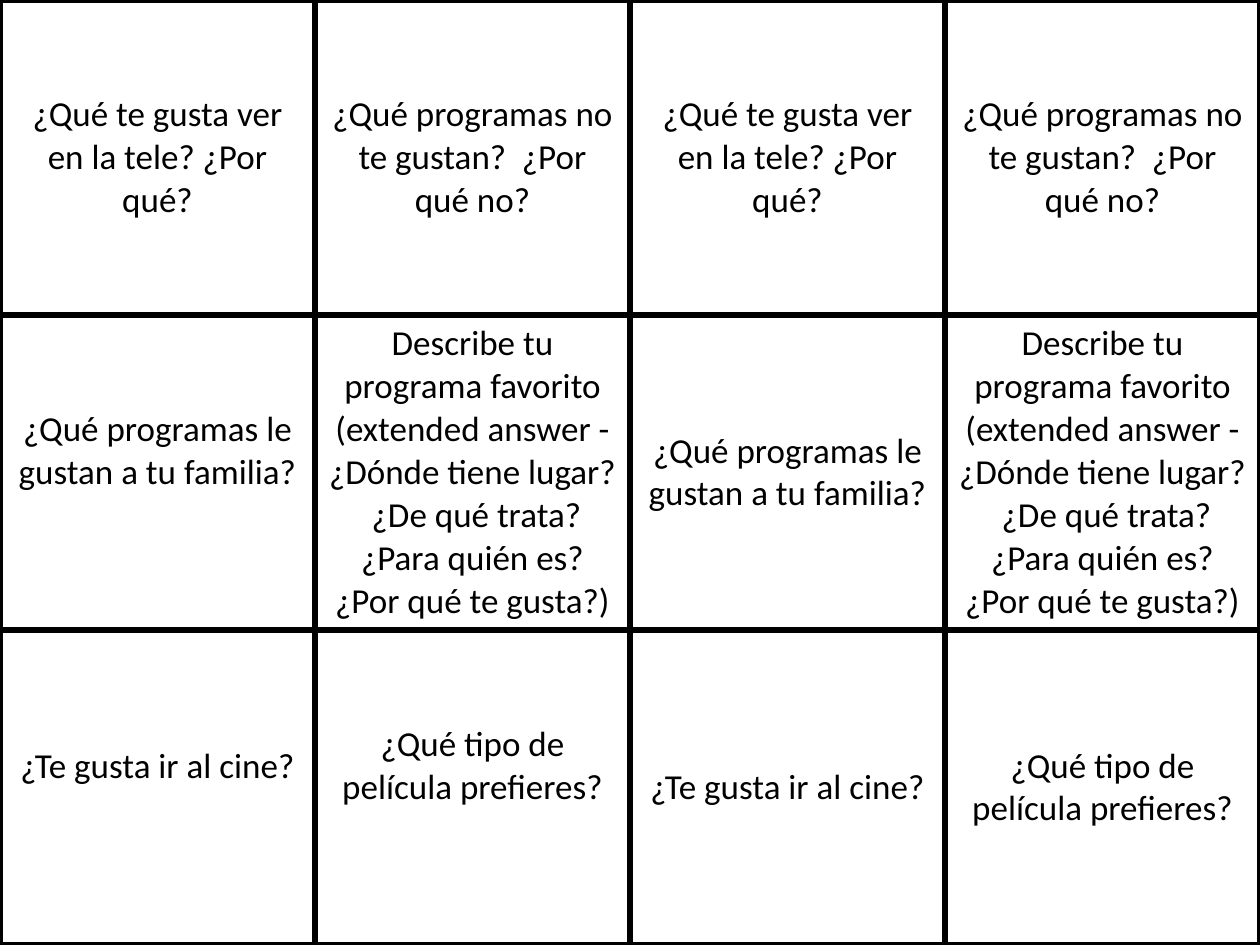
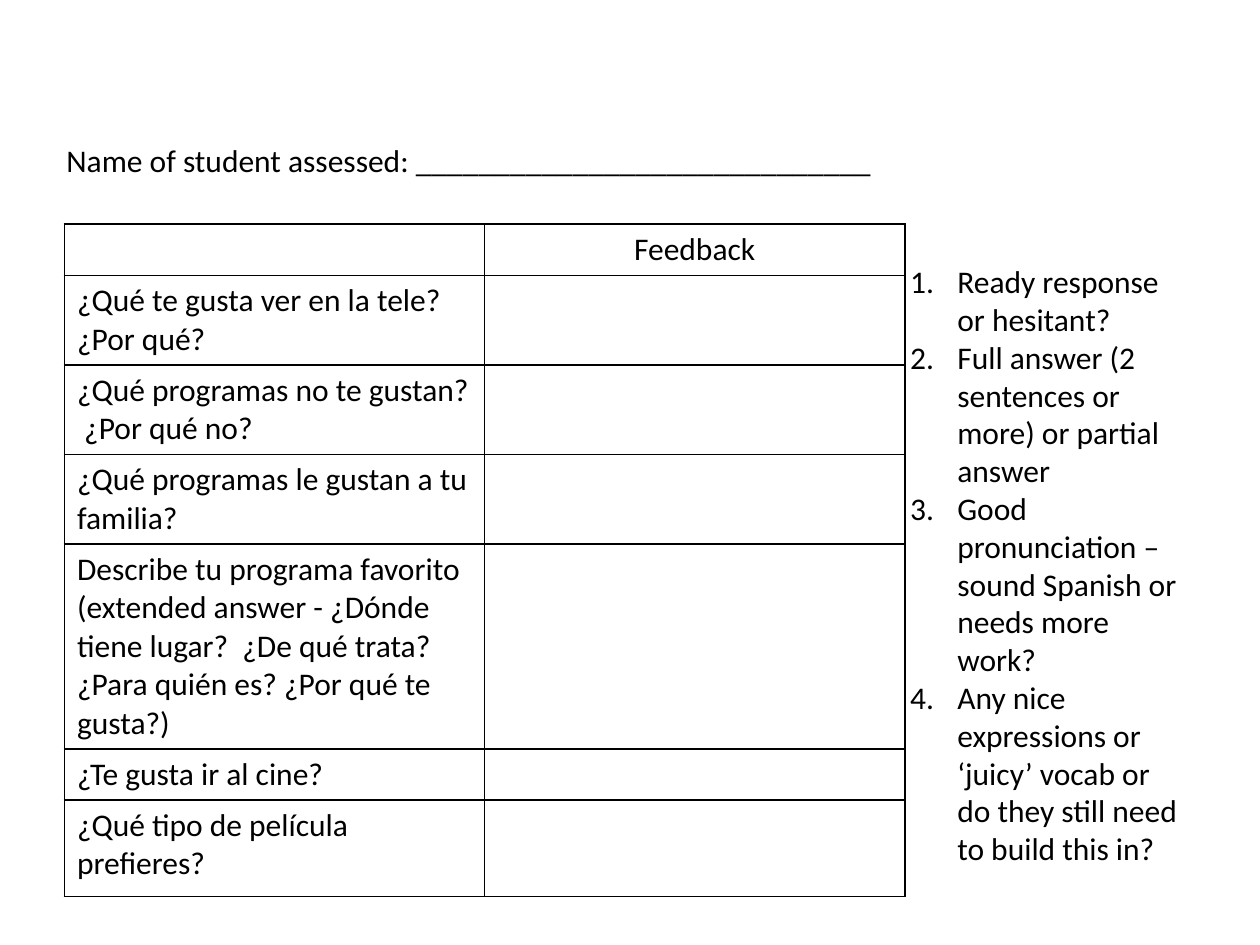
from lxml import etree
from pptx import Presentation
from pptx import util as u
from pptx.dml.color import RGBColor
from pptx.enum import text
from pptx.oxml import ns

COLOURS = {"ink": "000000"}
FONT = "Calibri"
QUESTIONS = [
    "¿Qué te gusta ver en la tele? ¿Por qué?",
    "¿Qué programas no te gustan?  ¿Por qué no?",
    "¿Qué programas le gustan a tu familia?",
    "Describe tu programa favorito (extended answer - ¿Dónde tiene lugar?  "
    "¿De qué trata? ¿Para quién es? ¿Por qué te gusta?)",
    "¿Te gusta ir al cine?",
    "¿Qué tipo de película prefieres?",
]
CRITERIA = [
    "Ready response or hesitant?",
    "Full answer (2 sentences or more) or partial answer",
    "Good pronunciation – sound Spanish or needs more work?",
    "Any nice expressions or ‘juicy’ vocab or do they still need to build this in?",
]


def write(paragraph, words, size, align=text.PP_ALIGN.LEFT):
    paragraph.text = words
    paragraph.alignment = align
    paragraph.font.name = FONT
    paragraph.font.size = u.Pt(size)
    paragraph.font.color.rgb = RGBColor.from_string(COLOURS["ink"])


def add_grid(slide, left, top, widths, heights, border):
    grid = slide.shapes.add_table(
        len(heights), len(widths), u.Cm(left), u.Cm(top),
        u.Cm(sum(widths)), u.Cm(sum(heights))).table
    grid.first_row = grid.horz_banding = False
    for column, width in zip(grid.columns, widths):
        column.width = u.Cm(width)
    for row, height in zip(grid.rows, heights):
        row.height = u.Cm(height)
    for cell in grid.iter_cells():
        borders = cell._tc.get_or_add_tcPr()
        for side in ("a:lnL", "a:lnR", "a:lnT", "a:lnB"):
            line = etree.SubElement(borders, ns.qn(side), w=str(u.Pt(border)))
            fill = etree.SubElement(line, ns.qn("a:solidFill"))
            etree.SubElement(fill, ns.qn("a:srgbClr"), val=COLOURS["ink"])
        cell.fill.background()
    return grid


deck = Presentation()
deck.slide_width, deck.slide_height = u.Cm(25.4), u.Cm(19.05)
blank = deck.slide_layouts[6]

cards_slide = deck.slides.add_slide(blank)
cards = add_grid(cards_slide, 0, 0, [6.35] * 4, [6.35] * 3, 4.5)
raised_cards = [(1, 0), (2, 0), (2, 1)]
for row in range(3):
    for column in range(4):
        card = cards.cell(row, column)
        card.vertical_anchor = text.MSO_ANCHOR.MIDDLE
        if (row, column) in raised_cards:
            card.margin_bottom = u.Cm(0.99)
        write(card.text_frame.paragraphs[0], QUESTIONS[row * 2 + column % 2],
              20, text.PP_ALIGN.CENTER)

feedback_slide = deck.slides.add_slide(blank)
feedback = add_grid(feedback_slide, 1.3, 4.52, [8.47] * 2,
                    [1.03, 1.78, 1.78, 1.78, 4.07, 1.03, 1.95], 1)
write(feedback.cell(0, 1).text_frame.paragraphs[0], "Feedback", 18,
      text.PP_ALIGN.CENTER)
for row, question in enumerate(QUESTIONS, 1):
    write(feedback.cell(row, 0).text_frame.paragraphs[0], question, 18)

student = feedback_slide.shapes.add_textbox(
    u.Cm(1.09), u.Cm(2.72), u.Cm(17), u.Cm(1.03)).text_frame
student.word_wrap = True
write(student.paragraphs[0], "Name of student assessed: " + "_" * 29, 18)

checklist = feedback_slide.shapes.add_textbox(
    u.Cm(18.1), u.Cm(5.16), u.Cm(6), u.Cm(12.57)).text_frame
checklist.word_wrap = True
for index, criterion in enumerate(CRITERIA):
    item = checklist.add_paragraph() if index else checklist.paragraphs[0]
    numbering = item._p.get_or_add_pPr()
    numbering.set("marL", str(u.Cm(0.95)))
    numbering.set("indent", str(-u.Cm(0.95)))
    etree.SubElement(numbering, ns.qn("a:buFont"), typeface=FONT)
    etree.SubElement(numbering, ns.qn("a:buAutoNum"), type="arabicPeriod")
    write(item, criterion, 18)

deck.save("out.pptx")
